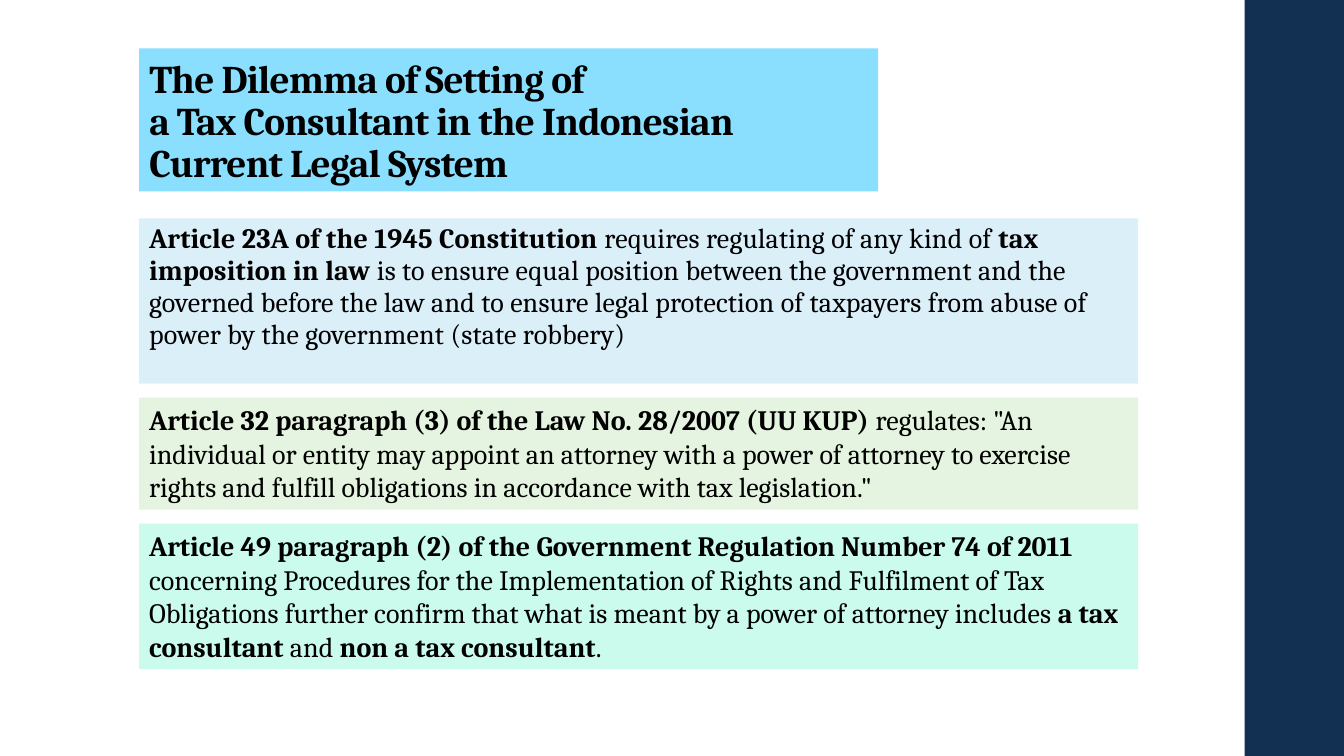
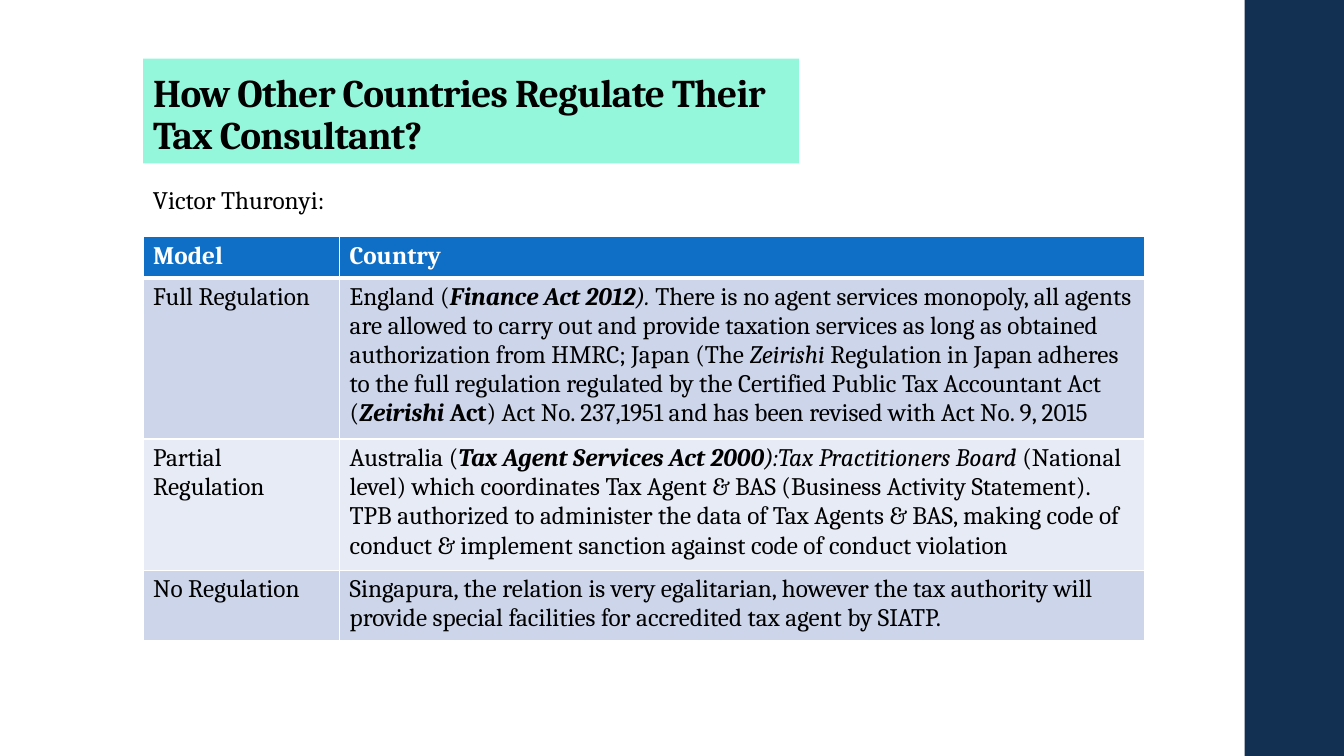
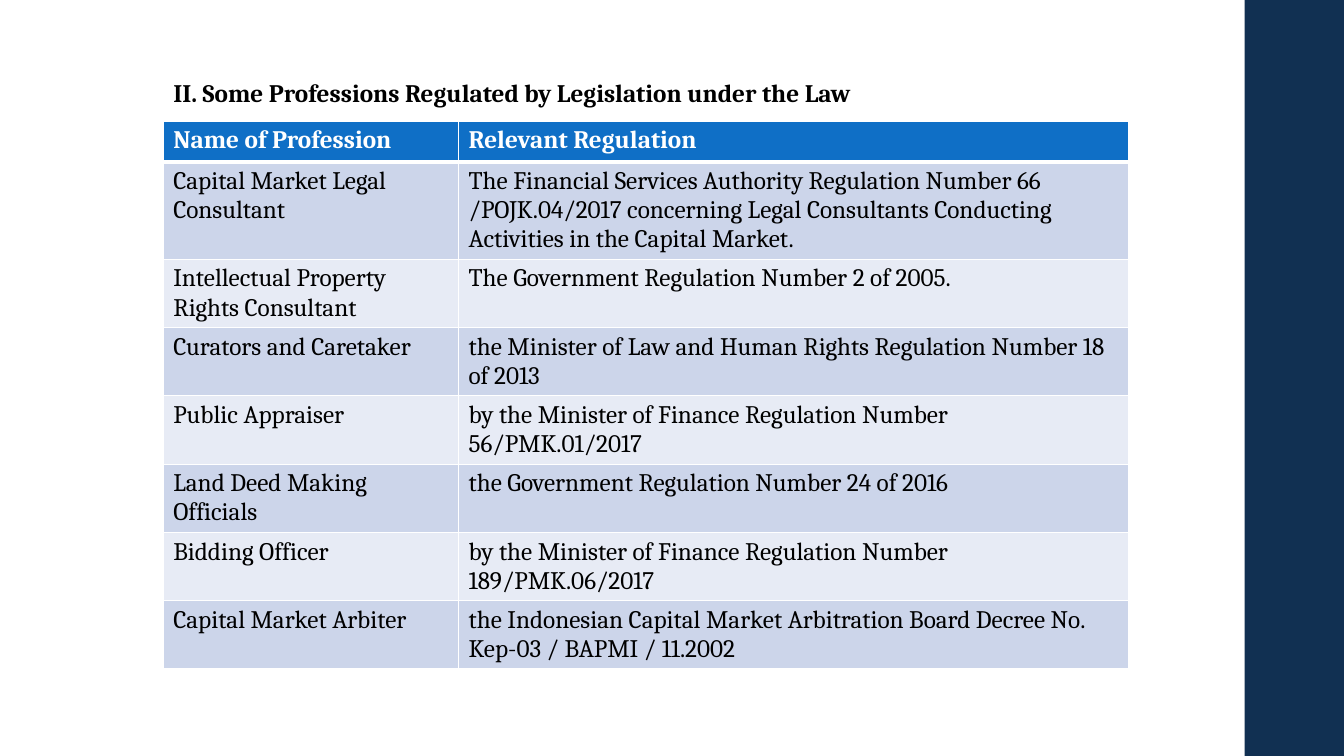
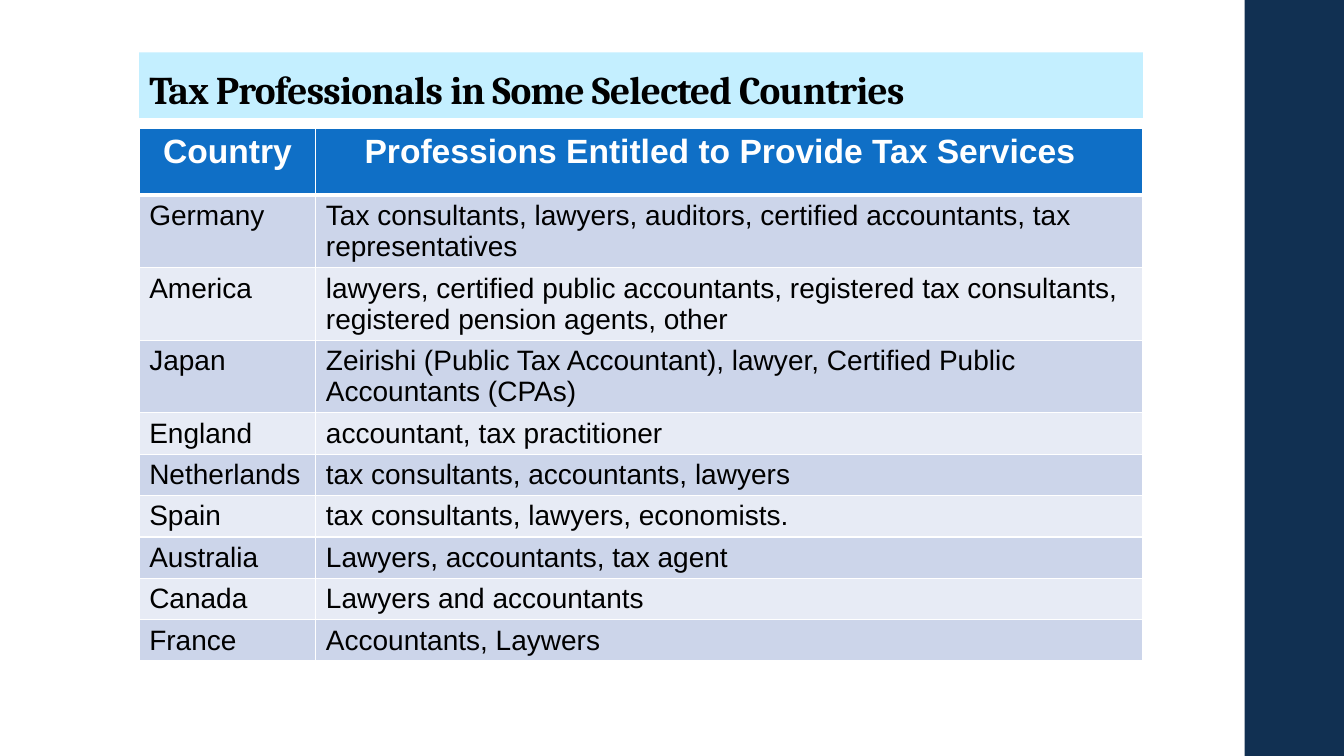
from lxml import etree
from pptx import Presentation
from pptx import util as u
from pptx.dml.color import RGBColor
from pptx.enum import shapes, text
from pptx.oxml import ns

Pt = u.Pt
SERIF, SANS = "Cambria", "Arial"
COLOURS = {
    "black": "000000", "white": "FFFFFF", "navy": "113052",
    "sky": "8ADFFF", "mint": "94F7DC", "ice": "C4EFFF",
    "pale_blue": "DBEFF9", "pale_green": "E5F4E0", "pale_mint": "CAFBED",
    "header": "0F6FC6", "odd_row": "CCD5EA", "even_row": "E7EBF5",
}
ROW_HEIGHT = 29.2


# Shared helpers

def rgb(name):
    return RGBColor.from_string(COLOURS[name])


def paint(shape, colour):
    shape.fill.solid()
    shape.fill.fore_color.rgb = rgb(colour)


def place(shape, left, top, width, height):
    shape.left, shape.top = Pt(left), Pt(top)
    shape.width, shape.height = Pt(width), Pt(height)


def write(para, content, size, font=SERIF, colour="black", bold=None, spacing=0):
    """Content is a string, or a list of strings and (string, style) pairs;
    a style holds b for bold and i for italic."""
    para.font.name, para.font.size = font, Pt(size)
    para.font.color.rgb = rgb(colour)
    para.font.bold = bold
    if isinstance(content, str):
        para.text = content
    else:
        for part in content:
            words, style = (part, "") if isinstance(part, str) else part
            span = para.add_run()
            span.text = words
            span.font.bold, span.font.italic = "b" in style, "i" in style
    if spacing:
        for span in para.runs:
            span._r.get_or_add_rPr().set("spc", str(round(spacing * 100)))


def add_navy_band(deck, page):
    """Draw the right-hand band and move it to the master, for every page."""
    band = page.shapes.add_shape(
        shapes.MSO_SHAPE.RECTANGLE, Pt(889), 0, Pt(71), deck.slide_height)
    band.shadow.inherit = False
    paint(band, "navy")
    band.line.fill.background()
    deck.slide_master.shapes.element.append(band.element)


def add_page(deck, title, area, colour=None, size=28):
    page = deck.slides.add_slide(deck.slide_layouts.get_by_name("Title Only"))
    box = page.shapes.title
    place(box, *area)
    frame = box.text_frame
    frame.auto_size = text.MSO_AUTO_SIZE.NONE
    frame.vertical_anchor = text.MSO_ANCHOR.TOP
    para = frame.paragraphs[0]
    para.alignment = text.PP_ALIGN.LEFT
    if colour:  # coloured title bar
        paint(box, colour)
        frame.vertical_anchor = text.MSO_ANCHOR.BOTTOM
        para.line_spacing = 0.9
    write(para, title, size, bold=True, spacing=-0.5 if colour else 0)
    return page


def add_text(page, content, area, size, colour=None, line_spacing=None, spacing=0):
    box = page.shapes.add_textbox(*(Pt(value) for value in area))
    if colour:
        paint(box, colour)
    box.text_frame.word_wrap = True
    para = box.text_frame.paragraphs[0]
    para.line_spacing = line_spacing
    write(para, content, size, spacing=spacing)


# Tables

def add_borders(cell, bottom):
    properties = cell._tc.get_or_add_tcPr()
    for side in ("lnL", "lnR", "lnT", "lnB"):
        width = bottom if side == "lnB" else 1
        line = etree.SubElement(properties, ns.qn("a:" + side), w=str(Pt(width)))
        fill = etree.SubElement(line, ns.qn("a:solidFill"))
        etree.SubElement(fill, ns.qn("a:srgbClr"), val=COLOURS["white"])


def add_table(page, rows, left, top, widths, size=18, font=SERIF,
              header_size=18, header_height=ROW_HEIGHT, header_align=None):
    height = header_height + ROW_HEIGHT * (len(rows) - 1)
    table = page.shapes.add_table(
        len(rows), len(widths), Pt(left), Pt(top), Pt(sum(widths)), Pt(height)).table
    table.horz_banding = False
    for column, width in zip(table.columns, widths):
        column.width = Pt(width)
    for r, row in enumerate(rows):
        is_header = r == 0
        table.rows[r].height = Pt(header_height if is_header else ROW_HEIGHT)
        for c, content in enumerate(row):
            cell = table.cell(r, c)
            add_borders(cell, 3 if is_header else 1)
            para = cell.text_frame.paragraphs[0]
            if is_header:
                paint(cell, "header")
                para.alignment = header_align
                write(para, content, header_size, font, "white", True)
            else:
                paint(cell, "odd_row" if r % 2 else "even_row")
                write(para, content, size, font)
    return table


# Pages

def add_dilemma(deck):
    page = add_page(
        deck,
        "The Dilemma of Setting of\va Tax Consultant in the Indonesian Current Legal System",
        (99.4, 34.6, 527.8, 102.2), "sky")
    articles = [
        (118, "pale_blue", 0.95, 0.1, [
            ("Article 23A of the 1945 Constitution ", "b"),
            "requires regulating of any kind of ",
            ("tax imposition in law ", "b"),
            "is to ensure equal position between the government and the governed "
            "before the law and to ensure legal protection of taxpayers from abuse "
            "of power by the government (state robbery)"]),
        (80, "pale_green", None, 0, [
            ("Article 32 paragraph (3) of the Law No. 28/2007 (UU KUP) ", "b"),
            'regulates: "An individual or entity may appoint an attorney with a '
            "power of attorney to exercise rights and fulfill obligations in "
            'accordance with tax legislation."']),
        (104, "pale_mint", None, 0, [
            ("Article 49 paragraph (2) of the Government Regulation Number 74 of 2011 ", "b"),
            "concerning Procedures for the Implementation of Rights and Fulfilment "
            "of Tax Obligations further confirm that what is meant by a power of "
            "attorney includes ",
            ("a tax consultant ", "b"), "and ", ("non a tax consultant", "b"), "."]),
    ]
    top, gap = 156, 10
    for height, colour, line_spacing, spacing, content in articles:
        add_text(page, content, (99.4, top, 713.5, height), 20, colour,
                 line_spacing, spacing)
        top += height + gap
    return page


def add_models(deck):
    left = 102.2
    page = add_page(deck, "How Other Countries Regulate Their Tax Consultant?",
                    (left, 41.8, 468.7, 74.9), "mint")
    add_text(page, "Victor Thuronyi:", (left, 128.2, 159, 29), 18)
    rows = [
        ("Model", "Country"),
        ("Full Regulation", [
            "England (", ("Finance Act 2012", "bi"), ("). ", "i"),
            "There is no agent services monopoly, all agents are allowed to carry "
            "out and provide taxation services as long as obtained authorization "
            "from HMRC; Japan (The ",
            ("Zeirishi ", "i"),
            "Regulation in Japan adheres to the full regulation regulated by the "
            "Certified Public Tax Accountant Act (",
            ("Zeirishi ", "bi"), ("Act", "b"),
            ") Act No. 237,1951 and has been revised with Act No. 9, 2015"]),
        ("Partial Regulation", [
            "Australia (", ("Tax Agent Services Act 2000", "bi"),
            ("):Tax Practitioners Board ", "i"),
            "(National level) which coordinates Tax Agent & BAS (Business Activity "
            "Statement). TPB authorized to administer the data of Tax Agents & BAS, "
            "making code of conduct & implement sanction against code of conduct "
            "violation"]),
        ("No Regulation",
         "Singapura, the relation is very egalitarian, however the tax authority "
         "will provide special facilities for accredited tax agent by SIATP."),
    ]
    add_table(page, rows, left, 169.2, (140.4, 575.3))


def add_professions(deck):
    left = 116.6
    page = add_page(deck, "II. Some Professions Regulated by Legislation under the Law",
                    (left, 51.8, 613.4, 32), size=18)
    rows = [
        ("Name of Profession", "Relevant Regulation"),
        ("Capital Market Legal Consultant",
         "The Financial Services Authority Regulation Number 66 /POJK.04/2017 "
         "concerning Legal Consultants Conducting Activities in the Capital Market."),
        ("Intellectual Property Rights Consultant",
         "The Government Regulation Number 2 of 2005."),
        ("Curators and Caretaker",
         "the Minister of Law and Human Rights Regulation Number 18 of 2013"),
        ("Public Appraiser",
         "by the Minister of Finance Regulation Number 56/PMK.01/2017"),
        ("Land Deed Making Officials", "the Government Regulation Number 24 of 2016"),
        ("Bidding Officer",
         "by the Minister of Finance Regulation Number 189/PMK.06/2017"),
        ("Capital Market Arbiter",
         "the Indonesian Capital Market Arbitration Board Decree No. "
         "Kep-03 / BAPMI / 11.2002"),
    ]
    add_table(page, rows, left, 86.4, (211, 478.8))


def add_countries(deck):
    left = 99.4
    page = add_page(deck, "Tax Professionals in Some Selected Countries",
                    (left, 37.4, 717, 46.8), "ice")
    rows = [
        ("Country", "Professions Entitled to Provide Tax Services"),
        ("Germany", "Tax consultants, lawyers, auditors, certified accountants, "
                    "tax representatives"),
        ("America", "lawyers, certified public accountants, registered tax "
                    "consultants, registered pension agents, other"),
        ("Japan", "Zeirishi (Public Tax Accountant), lawyer, Certified Public "
                  "Accountants (CPAs)"),
        ("England", "accountant, tax practitioner"),
        ("Netherlands", "tax consultants, accountants, lawyers"),
        ("Spain", "tax consultants, lawyers, economists."),
        ("Australia", "Lawyers, accountants, tax agent"),
        ("Canada", "Lawyers and accountants"),
        ("France", "Accountants, Laywers"),
    ]
    table = add_table(page, rows, left, 91.4, (126.2, 590.6), size=20, font=SANS,
                      header_size=24, header_height=48,
                      header_align=text.PP_ALIGN.CENTER)
    table.cell(0, 1).margin_right = Pt(20.5)  # heading sits left of centre


def main():
    deck = Presentation()
    deck.slide_width, deck.slide_height = Pt(960), Pt(540)
    add_navy_band(deck, add_dilemma(deck))
    add_models(deck)
    add_professions(deck)
    add_countries(deck)
    deck.save("out.pptx")


if __name__ == "__main__":
    main()
